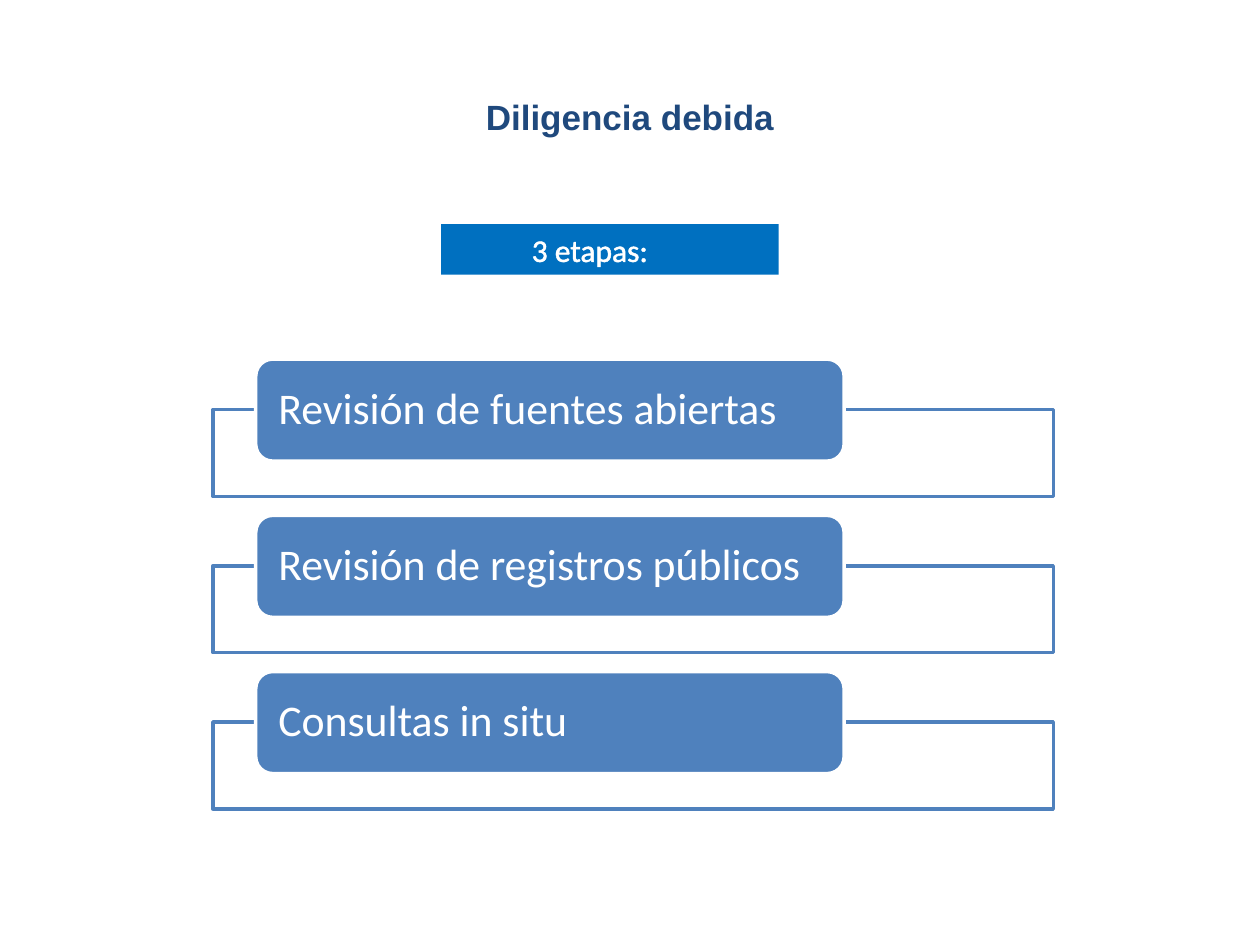
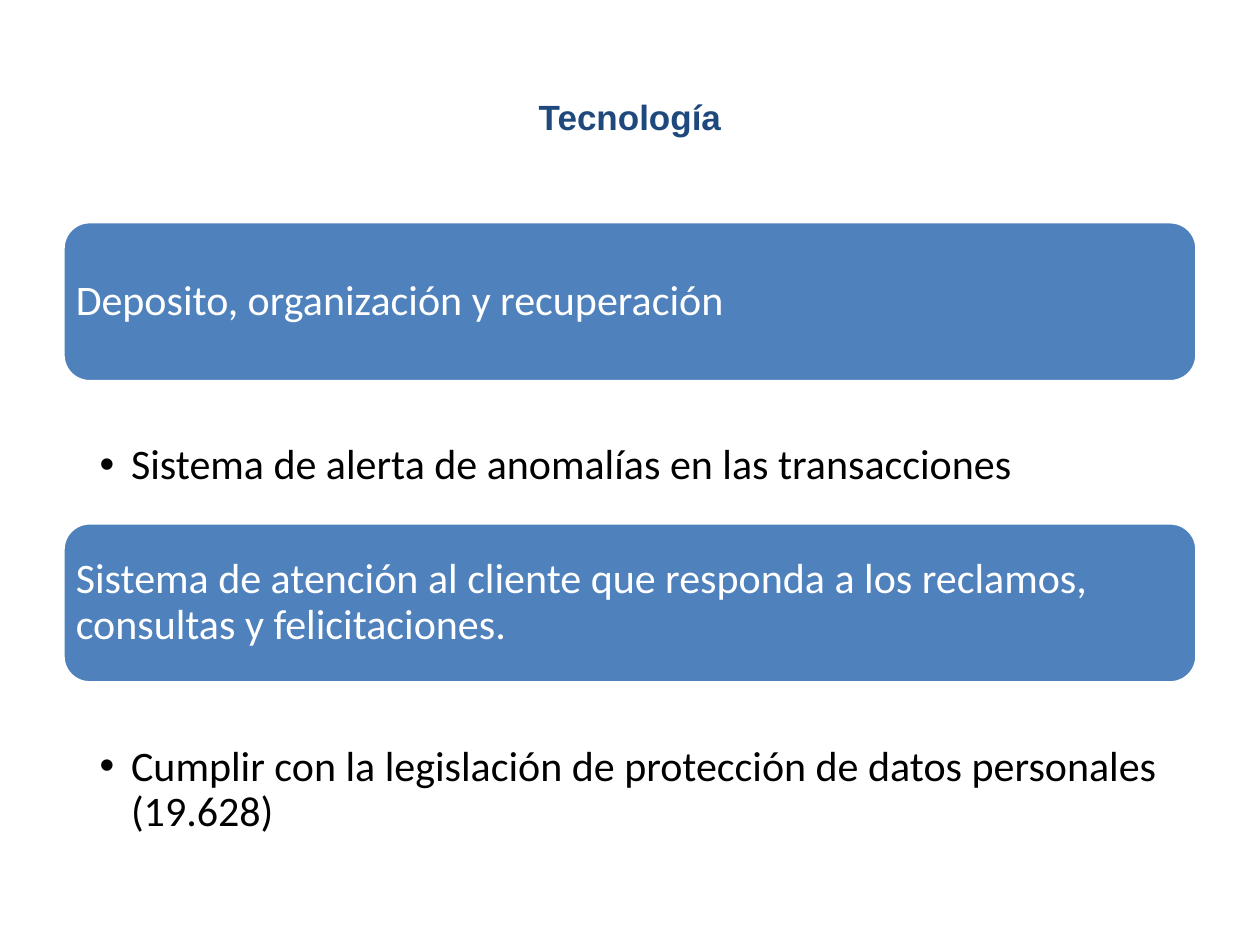
from pptx import Presentation
from pptx.dml.color import RGBColor
from pptx.enum.shapes import MSO_SHAPE
from pptx.enum.text import MSO_ANCHOR, MSO_AUTO_SIZE, PP_ALIGN
from pptx.oxml import parse_xml
from pptx.oxml.ns import nsdecls
from pptx.util import Pt

PX = 9144
BLUE, NAVY, BANNER, WHITE, BLACK = "4F81BD", "1F497D", "0070C0", "FFFFFF", "000000"
TITLE_BOX = (50, 30, 900, 125)


def add_box(slide, kind, box, fill, line=None):
    shape = slide.shapes.add_shape(kind, *(n * PX for n in box))
    shape.shadow.inherit = False
    shape.fill.solid()
    shape.fill.fore_color.rgb = RGBColor.from_string(fill)
    if line:
        shape.line.color.rgb = RGBColor.from_string(line)
        shape.line.width = Pt(2)
    else:
        shape.line.fill.background()
    return shape


def write(shape, text, size, color, insets, anchor=MSO_ANCHOR.MIDDLE,
          align=PP_ALIGN.LEFT, font="Calibri", bold=False, spacing=0.9):
    frame = shape.text_frame
    frame.text = text
    paragraph = frame.paragraphs[0]
    left, top, right, bottom = (n * PX for n in insets)
    frame_format = {"word_wrap": True, "auto_size": MSO_AUTO_SIZE.NONE,
                    "vertical_anchor": anchor, "margin_left": left,
                    "margin_top": top, "margin_right": right, "margin_bottom": bottom}
    paragraph_format = {"alignment": align, "line_spacing": spacing, "space_before": Pt(0)}
    font_format = {"name": font, "size": Pt(size), "bold": bold}
    run = paragraph.runs[0]
    for target, values in ((frame, frame_format), (paragraph, paragraph_format),
                           (run.font, font_format)):
        for name, value in values.items():
            setattr(target, name, value)
    run.font.color.rgb = RGBColor.from_string(color)
    return paragraph


deck = Presentation()
deck.slide_width, deck.slide_height = 1000 * PX, 750 * PX
diligence = deck.slides.add_slide(deck.slide_layouts[5])
technology = deck.slides.add_slide(deck.slide_layouts[3])

for slide, heading in ((diligence, "Diligencia debida"), (technology, "Tecnología")):
    title = slide.shapes.title
    title.left, title.top, title.width, title.height = (n * PX for n in TITLE_BOX)
    write(title, heading, 20, NAVY, (10, 5, 10, 5), align=PP_ALIGN.CENTER,
          font="Arial", bold=True, spacing=1.0)

stages = ("Revisión de fuentes abiertas", "Revisión de registros públicos", "Consultas in situ")
for row, stage in enumerate(stages):
    top = 285 + 124 * row
    add_box(diligence, MSO_SHAPE.RECTANGLE, (169, top + 40, 667, 69), WHITE, BLUE)
    card = add_box(diligence, MSO_SHAPE.ROUNDED_RECTANGLE, (203, top, 467, 81), BLUE, WHITE)
    write(card, stage, 25, WHITE, (14, 0, 10, 0))

stage_count = add_box(diligence, MSO_SHAPE.RECTANGLE, (350, 178, 268, 40), BANNER)
count_line = write(stage_count, "3 etapas:", 18, WHITE, (72, 5, 10, 5),
                   anchor=MSO_ANCHOR.TOP, spacing=1.0)
count_line.runs[0].font._element.insert(0, parse_xml(
    f'<a:ln {nsdecls("a")} w="18415"><a:solidFill><a:srgbClr val="{WHITE}"/></a:solidFill></a:ln>'))

topics = (
    ("Deposito, organización y recuperación",
     "Sistema de alerta de anomalías en las transacciones", 112),
    ("Sistema de atención al cliente que responda a los reclamos, consultas y felicitaciones.",
     "Cumplir con la legislación de protección de datos personales (19.628)", 126),
)
for row, (topic, detail, height) in enumerate(topics):
    top = 176 + 239 * row
    band = add_box(technology, MSO_SHAPE.ROUNDED_RECTANGLE, (50, top, 900, 127), BLUE, WHITE)
    write(band, topic, 24, WHITE, (4, 4, 4, 4))

    body = technology.placeholders[row + 1]
    body.left, body.top, body.width, body.height = (
        n * PX for n in (50, top + 127, 900, height))
    bullet = write(body, detail, 24, BLACK, (29, 49, 19, 3), anchor=MSO_ANCHOR.TOP)
    properties = bullet._p.get_or_add_pPr()
    properties.set("marL", str(25 * PX))
    properties.set("indent", str(-25 * PX))

deck.save("out.pptx")
